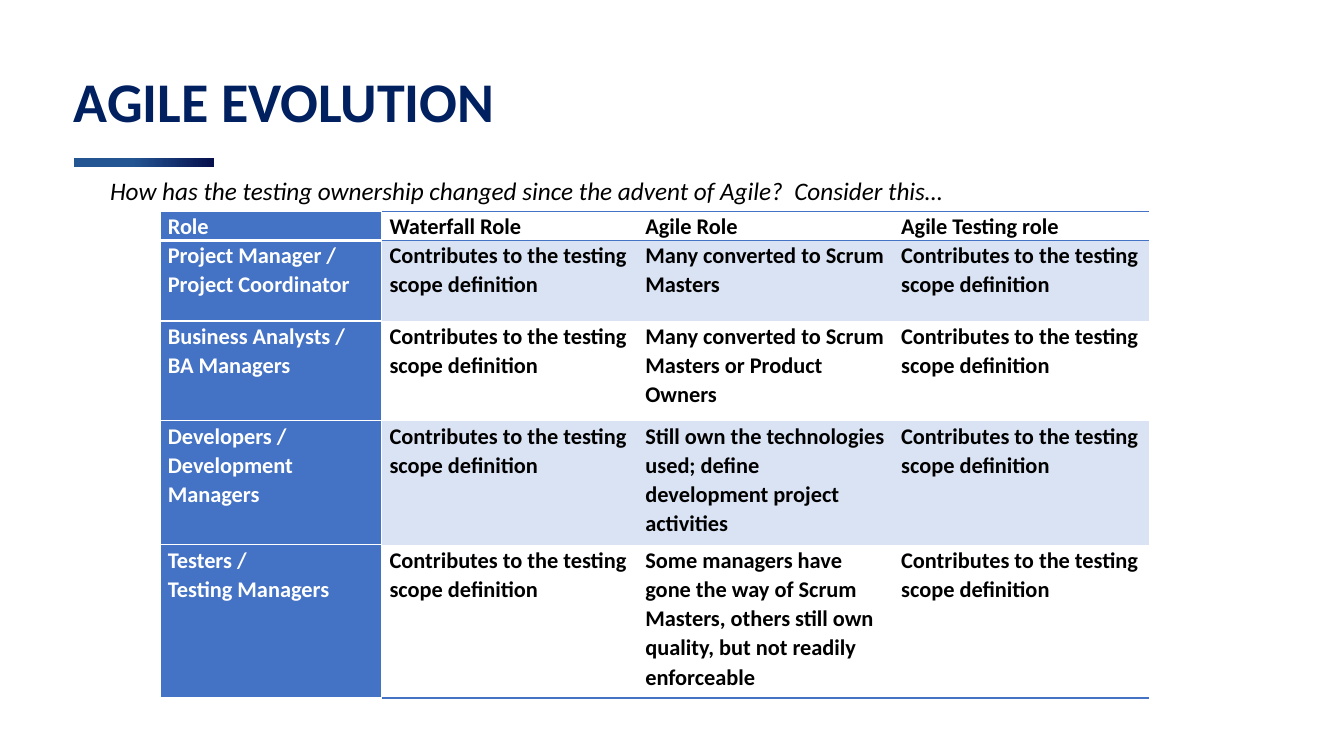
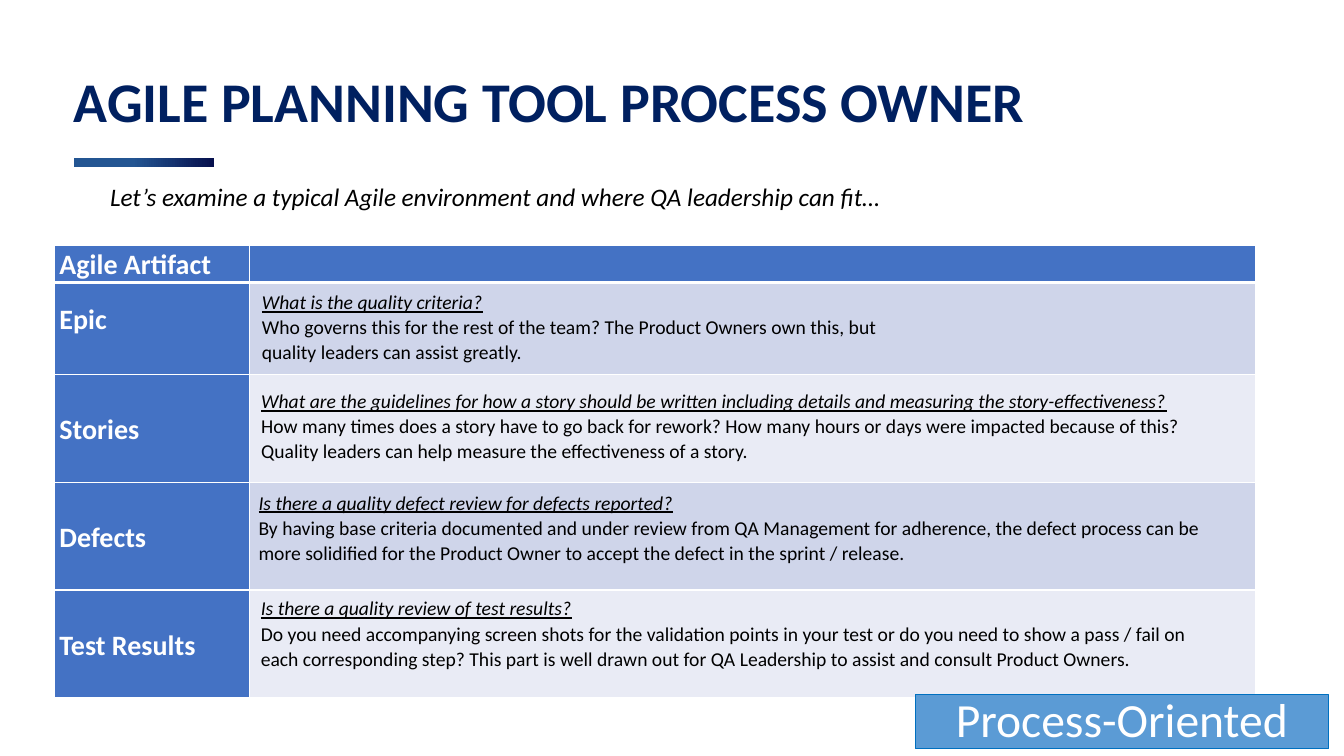
from lxml import etree
from pptx import Presentation
from pptx.dml.color import RGBColor
from pptx.enum.shapes import MSO_SHAPE
from pptx.enum.text import MSO_ANCHOR, MSO_AUTO_SIZE, PP_ALIGN
from pptx.oxml.ns import qn
from pptx.util import Pt

RECTANGLE = MSO_SHAPE.RECTANGLE
MIDDLE = MSO_ANCHOR.MIDDLE
NO_AUTOFIT = MSO_AUTO_SIZE.NONE
LEFT, CENTER = PP_ALIGN.LEFT, PP_ALIGN.CENTER

FONT = "Calibri"
PLAIN_TABLE = "{2D5ABB26-0587-4C30-8999-92F81FD0307C}"
COLORS = {
    "title": "002060", "text": "000000", "white": "FFFFFF", "blue": "4472C4",
    "role_band": "DAE3F3", "artifact_dark": "CFD5EA", "artifact_light": "E9EBF5",
    "bar_start": "235592", "bar_end": "06104D",
    "badge": "5B9BD5", "badge_line": "0070C0",
}

SCOPE = "Contributes to the testing scope definition"
EVOLUTION = {
    "title": "AGILE EVOLUTION",
    "question": "How has the testing ownership changed since the advent of Agile?  Consider this…",
    "question_top": 121.7,
    "question_spacing": 1,
}
ROLES = [
    ["Role"],
    ["Project Manager / Project Coordinator"],
    ["Business Analysts / BA Managers"],
    ["Developers / Development Managers"],
    ["Testers /", "Testing Managers"],
]
DUTIES = [
    ["Waterfall Role"] + [SCOPE] * 4,
    ["Agile Role",
     "Many converted to Scrum Masters",
     "Many converted to Scrum Masters or Product Owners",
     "Still own the technologies used; define development project activities",
     "Some managers have gone the way of Scrum Masters, others still own quality, "
     "but not readily enforceable"],
    ["Agile Testing role"] + [SCOPE] * 4,
]
ROLES_LEFT, ROLES_TOP = 114.5, 150.8
ROLE_WIDTH, DUTY_WIDTH = 158.4, 182.7
ROLE_HEIGHTS = [20.9, 57.6, 71.3, 88.6, 109.4]

PLANNING = {
    "title": "AGILE PLANNING TOOL PROCESS OWNER",
    "question": "Let’s examine a typical Agile environment and where QA leadership can fit…",
    "question_top": 128.4,
    "question_spacing": 0.9,
}
ARTIFACT_HEADER = "Agile Artifact"
ARTIFACTS = [
    {"name": "Epic", "name_top": 13, "box": (180, 180, 479.5, 84.2), "inset": 26, "lines": [
        "What is the quality criteria?",
        "Who governs this for the rest of the team? The Product Owners own this, "
        "but quality leaders can assist greatly."]},
    {"name": "Stories", "name_top": 26, "box": (179.5, 250.6, 700, 85), "inset": 26, "lines": [
        "What are the guidelines for how a story should be written including details "
        "and measuring the story-effectiveness?",
        "How many times does a story have to go back for rework? How many hours or days "
        "were impacted because of this?",
        "Quality leaders can help measure the effectiveness of a story."]},
    {"name": "Defects", "name_top": 26, "box": (177.6, 344.9, 701.3, 62), "inset": 4.5, "lines": [
        "Is there a quality defect review for defects reported?",
        "By having base criteria documented and under review from QA Management for "
        "adherence, the defect process can be more solidified for the Product Owner to "
        "accept the defect in the sprint / release."]},
    {"name": "Test Results", "name_top": 26, "box": (179.2, 402.5, 700, 80), "inset": 22.3, "lines": [
        "Is there a quality review of test results?",
        "Do you need accompanying screen shots for the validation points in your test or "
        "do you need to show a pass / fail on each corresponding step? This part is well "
        "drawn out for QA Leadership to assist and consult Product Owners."]},
]
ARTIFACT_WIDTHS = [139, 718.5]
ARTIFACT_HEIGHTS = [26.4, 65.7, 77, 77, 77]
BADGE = "Process-Oriented"


def rgb(name):
    return RGBColor.from_string(COLORS[name])


def write(frame, lines, size, color="text", bold=False, italic=False, spacing=1.07, align=LEFT):
    frame.text = "\n".join(lines)
    for paragraph in frame.paragraphs:
        paragraph.line_spacing = spacing
        paragraph.alignment = align
        for run in paragraph.runs:
            font = run.font
            font.name, font.size = FONT, Pt(size)
            font.bold, font.italic = bold, italic
            font.color.rgb = rgb(color)


def set_borders(cell, **edges):
    properties = cell._tc.get_or_add_tcPr()
    for side in "LRTB":
        if side in edges:
            color, width = edges[side]
            line = etree.SubElement(properties, qn(f"a:ln{side}"), w=str(Pt(width)))
            fill = etree.SubElement(line, qn("a:solidFill"))
            etree.SubElement(fill, qn("a:srgbClr"), val=COLORS[color])


def white_grid(cell, row):
    edges = {"L": ("white", 1), "R": ("white", 1), "B": ("white", 1 if row else 3)}
    if row == 0:
        edges["T"] = ("white", 1)
    set_borders(cell, **edges)


def paint_cell(cell, color, side_margin, top=0):
    if color:
        cell.fill.solid()
        cell.fill.fore_color.rgb = rgb(color)
    else:
        cell.fill.background()
    cell.margin_left = cell.margin_right = Pt(side_margin)
    cell.margin_top, cell.margin_bottom = Pt(top), 0


def add_grid(slide, left, top, widths, heights):
    table = slide.shapes.add_table(len(heights), len(widths), Pt(left), Pt(top),
                                   Pt(sum(widths)), Pt(sum(heights))).table
    table.first_row = table.horz_banding = False
    table._tbl.tblPr.find(qn("a:tableStyleId")).text = PLAIN_TABLE
    for column, width in zip(table.columns, widths):
        column.width = Pt(width)
    for row, height in zip(table.rows, heights):
        row.height = Pt(height)
    return table


def add_text(slide, left, top, width, height):
    box = slide.shapes.add_textbox(Pt(left), Pt(top), Pt(width), Pt(height))
    box.text_frame.word_wrap = True
    return box.text_frame


def prepare_layout(prs):
    layout = prs.slide_layouts[5]
    heading = layout.placeholders[0]
    heading.left, heading.top, heading.width, heading.height = Pt(45.6), Pt(30.2), Pt(710), Pt(91.4)
    heading.text_frame.vertical_anchor = MIDDLE
    heading.text_frame.auto_size = NO_AUTOFIT
    return layout


def add_accent_bar(slide):
    bar = slide.shapes.add_shape(RECTANGLE, Pt(52.9), Pt(113), Pt(100), Pt(6.5))
    bar.shadow.inherit = False
    bar.line.fill.background()
    bar.fill.gradient()
    bar.fill.gradient_angle = 0
    stops = zip(bar.fill.gradient_stops, [(0.42, "bar_start"), (1, "bar_end")])
    for stop, (position, color) in stops:
        stop.position = position
        stop.color.rgb = rgb(color)
    slide.slide_layout.shapes._spTree.append(bar._element)


def add_topic(prs, layout, topic):
    slide = prs.slides.add_slide(layout)
    write(slide.shapes.title.text_frame, [topic["title"]], 40, "title", bold=True, spacing=0.8)
    question = add_text(slide, 71.5, topic["question_top"], 840, 28)
    write(question, [topic["question"]], 18, italic=True, spacing=topic["question_spacing"])
    return slide


def add_roles(slide):
    table = add_grid(slide, ROLES_LEFT, ROLES_TOP, [ROLE_WIDTH], ROLE_HEIGHTS)
    for row, role in enumerate(ROLES):
        cell = table.cell(row, 0)
        white_grid(cell, row)
        paint_cell(cell, "blue", 5.4)
        write(cell.text_frame, role, 16, "white", bold=True)


def add_duties(slide):
    ruled_edges = {0: "TB", len(ROLES) - 1: "B"}
    for position, duties in enumerate(DUTIES):
        left = ROLES_LEFT + ROLE_WIDTH + position * DUTY_WIDTH
        table = add_grid(slide, left, ROLES_TOP, [DUTY_WIDTH], ROLE_HEIGHTS)
        for row, duty in enumerate(duties):
            cell = table.cell(row, 0)
            set_borders(cell, **{side: ("blue", 1) for side in ruled_edges.get(row, "")})
            paint_cell(cell, "role_band" if row % 2 else None, 5.4)
            write(cell.text_frame, [duty], 16, bold=True)


def add_artifacts(slide):
    table = add_grid(slide, 39.2, 175.4, ARTIFACT_WIDTHS, ARTIFACT_HEIGHTS)
    for row in range(len(ARTIFACT_HEIGHTS)):
        for column in range(2):
            white_grid(table.cell(row, column), row)
    for column in range(2):
        paint_cell(table.cell(0, column), "blue", 3.3)
    write(table.cell(0, 0).text_frame, [ARTIFACT_HEADER], 20, "white", bold=True)
    for row, artifact in enumerate(ARTIFACTS, 1):
        name = table.cell(row, 0)
        paint_cell(name, "blue", 3.3, artifact["name_top"])
        write(name.text_frame, [artifact["name"]], 20, "white", bold=True)
        paint_cell(table.cell(row, 1), "artifact_dark" if row % 2 else "artifact_light", 3.3)


def add_answers(slide):
    for artifact in ARTIFACTS:
        answer = add_text(slide, *artifact["box"])
        answer.margin_top = Pt(artifact["inset"])
        write(answer, artifact["lines"], 14)
        lead = answer.paragraphs[0].runs[0].font
        lead.italic = lead.underline = True


def add_badge(slide):
    badge = slide.shapes.add_shape(RECTANGLE, Pt(653.8), Pt(496.1), Pt(295), Pt(38.9))
    badge.shadow.inherit = False
    badge.fill.solid()
    badge.fill.fore_color.rgb = rgb("badge")
    badge.line.color.rgb = rgb("badge_line")
    badge.line.width = Pt(0.75)
    badge.text_frame.vertical_anchor = MIDDLE
    write(badge.text_frame, [BADGE], 34, "white", spacing=0.9, align=CENTER)


def main():
    prs = Presentation()
    prs.slide_width, prs.slide_height = Pt(960), Pt(540)
    layout = prepare_layout(prs)
    evolution = add_topic(prs, layout, EVOLUTION)
    add_accent_bar(evolution)
    add_roles(evolution)
    add_duties(evolution)
    planning = add_topic(prs, layout, PLANNING)
    add_artifacts(planning)
    add_answers(planning)
    add_badge(planning)
    prs.save("out.pptx")


if __name__ == "__main__":
    main()
